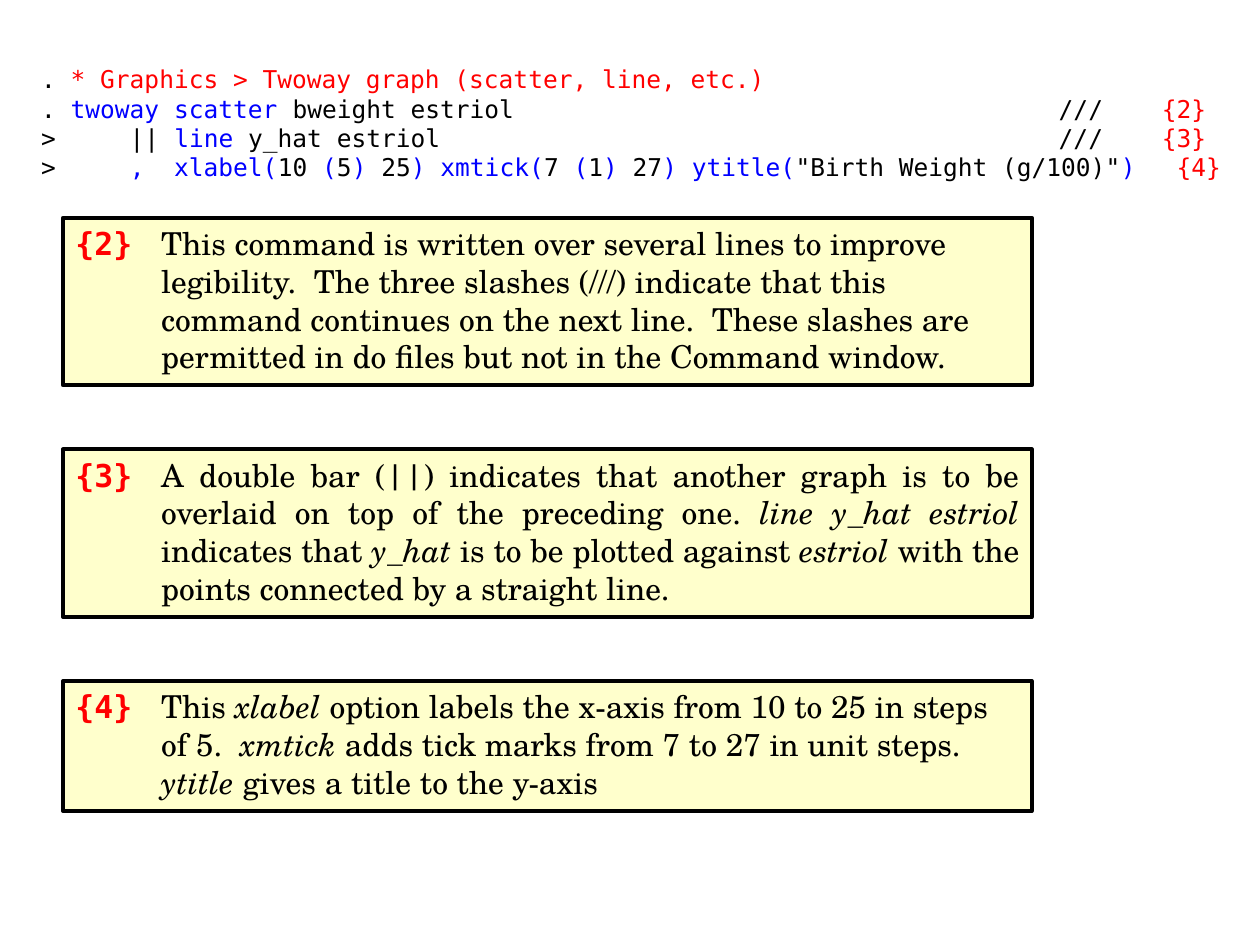
from dataclasses import dataclass

from lxml import etree
from pptx import Presentation
from pptx.dml.color import RGBColor
from pptx.enum.shapes import MSO_SHAPE
from pptx.enum.text import MSO_ANCHOR, MSO_AUTO_SIZE, PP_ALIGN
from pptx.oxml.ns import qn
from pptx.util import Cm, Pt

RECTANGLE = MSO_SHAPE.RECTANGLE
TOP = MSO_ANCHOR.TOP
GROW = MSO_AUTO_SIZE.SHAPE_TO_FIT_TEXT
LEFT, JUSTIFY = PP_ALIGN.LEFT, PP_ALIGN.JUSTIFY

MONO, SERIF = "DejaVu Sans Mono", "TeX Gyre Schola"
BLACK, RED, BLUE, CREAM = "000000", "FF0000", "0000FF", "FFFFCC"

CODE_COLUMN = 0.2973  # width of one code character in cm
NOTE_TOP, NOTE_PITCH, NOTE_INDENT = 4.39, 4.67, 1.73


@dataclass
class Span:
    text: str
    color: str = BLACK
    italic: bool = False


@dataclass
class CodeLine:
    spans: list[Span]
    tab_columns: tuple[int, ...] = ()


@dataclass
class Note:
    label: str
    height: float
    spans: list[Span]
    align: PP_ALIGN = LEFT


def command(text: str) -> Span:
    return Span(text, BLUE)


def term(text: str) -> Span:
    return Span(text, italic=True)


CODE = [
    CodeLine([Span(". "), Span("* Graphics > Twoway graph (scatter, line, etc.)", RED)]),
    CodeLine([Span(". "), command("twoway scatter"), Span(" bweight estriol\t///\t"),
              Span("{2}", RED)], (69, 76)),
    CodeLine([Span(">     || "), command("line"), Span(" y_hat estriol\t///\t"),
              Span("{3}", RED)], (69, 76)),
    CodeLine([Span(">     "), command(",  xlabel("), Span("10 "), command("("), Span("5"),
              command(")"), Span(" 25"), command(") xmtick("), Span("7 "), command("("),
              Span("1"), command(")"), Span(" 27"), command(") ytitle("),
              Span('"Birth Weight (g/100)"'), command(")\t"), Span("{4}", RED)], (77,)),
]

NOTES = [
    Note("{2}", 3.38, [
        Span("This command is written over several lines to improve legibility.  "
             "The three slashes (///) indicate that this command continues on the next line.  "
             "These slashes are permitted in do files but not in the Command window.")]),
    Note("{3}", 3.38, [
        Span("A double bar (||) indicates that another graph is to be overlaid "
             "on top of the preceding one. "),
        term("line y_hat estriol"), Span(" indicates that "), term("y_hat"),
        Span(" is to be plotted against "), term("estriol"),
        Span(" with the points connected by a straight line.")], JUSTIFY),
    Note("{4}", 2.62, [
        Span("This "), term("xlabel"),
        Span(" option labels the x-axis from 10 to 25 in steps of 5.  "), term("xmtick"),
        Span(" adds tick marks from 7 to 27 in unit steps.  "), term("ytitle"),
        Span(" gives a title to the y-axis")]),
]


def rgb(color: str) -> RGBColor:
    return RGBColor.from_string(color)


def add_text(para, text: str, *, font: str, size: float, color: str = BLACK,
             bold: bool = False, italic: bool = False) -> None:
    run = para.add_run()
    run.text = text
    run.font.name = font
    run.font.size = Pt(size)
    run.font.bold = bold
    run.font.italic = italic
    run.font.color.rgb = rgb(color)


def set_tabs(para, columns: tuple[int, ...]) -> None:
    tabs = etree.SubElement(para._p.get_or_add_pPr(), qn("a:tabLst"))
    for column in columns:
        position = Cm(column * CODE_COLUMN)
        etree.SubElement(tabs, qn("a:tab"), pos=str(int(position)), algn="l")


def set_hanging_indent(para, indent: float) -> None:
    properties = para._p.get_or_add_pPr()
    properties.set("marL", str(int(Cm(indent))))
    properties.set("indent", str(-int(Cm(indent))))


def add_code(page, lines: list[CodeLine]) -> None:
    box = page.shapes.add_textbox(Cm(0.58), Cm(1.17), Cm(24.82), Cm(2.62))
    frame = box.text_frame
    frame.word_wrap = True
    frame.auto_size = GROW
    for index, line in enumerate(lines):
        para = frame.add_paragraph() if index else frame.paragraphs[0]
        if line.tab_columns:
            set_tabs(para, line.tab_columns)
        for span in line.spans:
            add_text(para, span.text, font=MONO, size=14, color=span.color)


def add_note(page, note: Note, top: float) -> None:
    box = page.shapes.add_shape(RECTANGLE, Cm(1.27), Cm(top), Cm(19.53), Cm(note.height))
    box.shadow.inherit = False
    box.fill.solid()
    box.fill.fore_color.rgb = rgb(CREAM)
    box.line.color.rgb = rgb(BLACK)
    box.line.width = Pt(2.25)
    frame = box.text_frame
    frame.word_wrap = True
    frame.auto_size = GROW
    frame.vertical_anchor = TOP
    para = frame.paragraphs[0]
    para.alignment = note.align
    set_hanging_indent(para, NOTE_INDENT)
    add_text(para, note.label + "\t", font=MONO, size=18, color=RED, bold=True)
    for span in note.spans:
        add_text(para, span.text, font=SERIF, size=18, color=span.color, italic=span.italic)


def main() -> None:
    deck = Presentation()
    deck.slide_width, deck.slide_height = Cm(25.4), Cm(19.05)
    page = deck.slides.add_slide(deck.slide_layouts[6])

    # Command listing
    add_code(page, CODE)

    # Explanations of the numbered lines
    for index, note in enumerate(NOTES):
        add_note(page, note, NOTE_TOP + index * NOTE_PITCH)

    deck.save("out.pptx")


if __name__ == "__main__":
    main()
